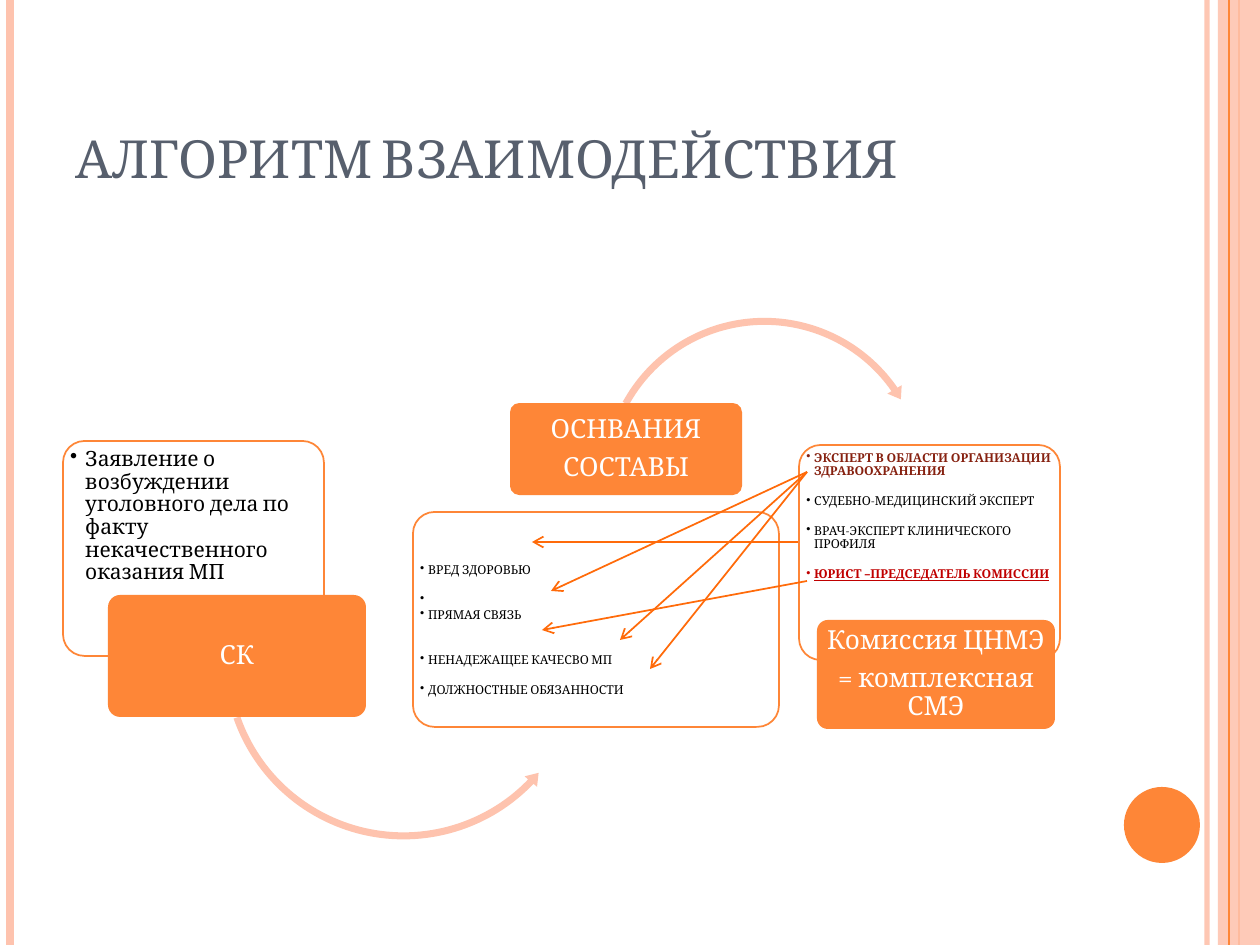
import lxml.etree
import pptx
import pptx.dml.color
import pptx.enum.shapes
import pptx.enum.text
import pptx.oxml.ns
import pptx.util

RGB = pptx.dml.color.RGBColor
Pt = pptx.util.Pt
KIND = pptx.enum.shapes.MSO_SHAPE
STRAIGHT = pptx.enum.shapes.MSO_CONNECTOR.STRAIGHT
ALIGN = pptx.enum.text.PP_ALIGN
ANCHOR = pptx.enum.text.MSO_ANCHOR
qn = pptx.oxml.ns.qn

ORANGE = RGB(0xFE, 0x86, 0x37)
PEACH = RGB(0xFE, 0xC3, 0xAE)
DEEP = RGB(0xFF, 0x6B, 0x0A)
SLATE = RGB(0x57, 0x5F, 0x6D)
BROWN = RGB(0x86, 0x21, 0x10)
RED = RGB(0xC0, 0x00, 0x00)
WHITE = RGB(0xFF, 0xFF, 0xFF)
BLACK = RGB(0x00, 0x00, 0x00)

SCALE = 914400 / 126
WIDE, HIGH = 1260, 945


def emu(*px):
    return [round(n * SCALE) for n in px]


def assign(target, values):
    for name, value in values.items():
        setattr(target, name, value)


def fade(props, where, alpha):
    """Set the opacity, in percent, of the colour found at the given place."""
    for color in props.xpath(where + "/a:srgbClr"):
        lxml.etree.SubElement(color, qn("a:alpha"), val=str(alpha * 1000))


class Canvas:
    font = "Cambria"

    def __init__(self, slide):
        self.slide = slide

    def line(self, start, end, color, width, alpha=100, arrow=False):
        link = self.slide.shapes.add_connector(STRAIGHT, *emu(*start, *end))
        link.line.color.rgb = color
        link.line.width = Pt(width)
        props = link._element.spPr
        if alpha < 100:
            fade(props, "./a:ln/a:solidFill", alpha)
        if arrow:
            lxml.etree.SubElement(props.find(qn("a:ln")), qn("a:tailEnd"), type="arrow")
        lxml.etree.SubElement(props, qn("a:effectLst"))

    def shape(self, kind, box, fill, edge=None, alpha=100, adjust=()):
        """Draw a preset shape; adjust holds thousandths."""
        item = self.slide.shapes.add_shape(kind, *emu(*box))
        item.shadow.inherit = False
        item.fill.solid()
        item.fill.fore_color.rgb = fill
        if alpha < 100:
            fade(item._element.spPr, "./a:solidFill", alpha)
        if edge:
            item.line.color.rgb = edge
            item.line.width = Pt(1)
        else:
            item.line.fill.background()
        for index, value in enumerate(adjust):
            item.adjustments[index] = value / 1000
        return item

    def frame(self, item, anchor, margins):
        frame = item.text_frame
        sides = ("margin_left", "margin_top", "margin_right", "margin_bottom")
        assign(frame, {"word_wrap": True, "vertical_anchor": anchor,
                       **dict(zip(sides, emu(*margins)))})
        return frame

    def text(self, frame, rows, layout, style, indent=0):
        """Fill a frame with (wording, space before, font changes) rows."""
        for index, (words, before, extra) in enumerate(rows):
            para = frame.add_paragraph() if index else frame.paragraphs[0]
            if indent:
                props = para._p.get_or_add_pPr()
                hang = emu(indent)[0]
                props.set("marL", str(hang))
                props.set("indent", str(-hang))
                lxml.etree.SubElement(props, qn("a:buChar"), char="•")
            assign(para, {**layout, "space_before": Pt(before)})
            run = para.add_run()
            run.text = words
            look = {"name": self.font, **style, **extra}
            run.font.color.rgb = look.pop("color")
            assign(run.font, look)

    def title(self, box, words):
        item = self.slide.shapes.add_textbox(*emu(*box))
        frame = self.frame(item, ANCHOR.BOTTOM, (13, 6, 13, 6))
        self.text(frame, [(words, 0, {})], {}, {"size": Pt(30), "color": SLATE})
        frame.paragraphs[0].runs[0]._r.get_or_add_rPr().set("cap", "small")

    def panel(self, box, rows, size, indent, top=0):
        """Draw an outlined box with a bullet list."""
        item = self.shape(KIND.ROUNDED_RECTANGLE, box, WHITE, ORANGE, 90, [100])
        frame = self.frame(item, ANCHOR.TOP, (1, 1 + top, 1, 1))
        layout = {"alignment": ALIGN.LEFT, "line_spacing": 0.9,
                  "space_after": Pt(round(size * 0.15, 2))}
        self.text(frame, rows, layout, {"size": Pt(size), "color": BLACK}, indent)

    def label(self, box, *lines):
        item = self.shape(KIND.ROUNDED_RECTANGLE, box, ORANGE, adjust=[100])
        frame = self.frame(item, ANCHOR.MIDDLE, (4, 3, 4, 3))
        layout = {"alignment": ALIGN.CENTER, "line_spacing": 0.9,
                  "space_after": Pt(5.25)}
        rows = [(words, 0, {}) for words in lines]
        self.text(frame, rows, layout, {"size": Pt(15), "color": WHITE})


def main():
    deck = pptx.Presentation()
    deck.slide_width, deck.slide_height = emu(WIDE, HIGH)
    page = Canvas(deck.slides.add_slide(deck.slide_layouts[6]))

    def stripe(x, color, width, alpha=100):
        page.line((x, 0), (x, HIGH), color, width, alpha)

    stripe(1207, PEACH, 3, 93)
    stripe(10, PEACH, 4.5)
    stripe(1239, ORANGE, 1.5)
    page.shape(KIND.RECTANGLE, (1218, 0, 42, HIGH), PEACH, alpha=87)
    stripe(1229, ORANGE, 0.75)
    page.shape(KIND.OVAL, (1124, 787, 76, 76), ORANGE)
    page.title((63, 38, 1029, 157), "АЛГОРИТМ ВЗАИМОДЕЙСТВИЯ")

    gap = 8.5
    page.panel((63, 441, 261, 215), [
        ("Заявление о возбуждении уголовного дела по факту "
         "некачественного оказания МП", 0, {}),
    ], size=12, indent=15)
    page.shape(KIND.LEFT_CIRCULAR_ARROW, (219, 475, 369, 369), PEACH,
               adjust=(19, 2288, 26282, 96484, 22))
    page.label((108, 595, 258, 122), "СК")

    page.panel((413, 512, 366, 215), [
        ("ВРЕД ЗДОРОВЬЮ", 0, {}),
        (" ", gap, {}),
        ("ПРЯМАЯ СВЯЗЬ", 0, {}),
        ("НЕНАДЕЖАЩЕЕ КАЧЕСВО МП", 2 * gap, {}),
        ("ДОЛЖНОСТНЫЕ ОБЯЗАННОСТИ", gap, {}),
    ], size=7, indent=8, top=45)
    page.shape(KIND.CIRCULAR_ARROW, (598, 313, 333, 333), PEACH,
               adjust=(21, 2551, 195175, 125236, 25))
    page.label((510, 403, 232, 92), "ОСНВАНИЯ", "СОСТАВЫ")

    page.panel((799, 445, 261, 215), [
        ("ЭКСПЕРТ В ОБЛАСТИ ОРГАНИЗАЦИИ ЗДРАВООХРАНЕНИЯ", 0,
         {"color": BROWN, "bold": True}),
        ("СУДЕБНО-МЕДИЦИНСКИЙ ЭКСПЕРТ", gap, {}),
        ("ВРАЧ-ЭКСПЕРТ КЛИНИЧЕСКОГО ПРОФИЛЯ", gap, {}),
        ("ЮРИСТ –ПРЕДСЕДАТЕЛЬ КОМИССИИ", gap,
         {"color": RED, "bold": True, "underline": True}),
    ], size=7, indent=8)
    page.label((817, 620, 238, 109), "Комиссия ЦНМЭ", "= комплексная СМЭ")

    expert = (807, 472)
    for start, end in (
        (expert, (620, 640)),
        (expert, (650, 669)),
        (expert, (551, 591)),
        ((798, 542), (532, 542)),
        ((807, 581), (542, 630)),
    ):
        page.line(start, end, DEEP, 1, arrow=True)

    deck.save("out.pptx")


if __name__ == "__main__":
    main()
